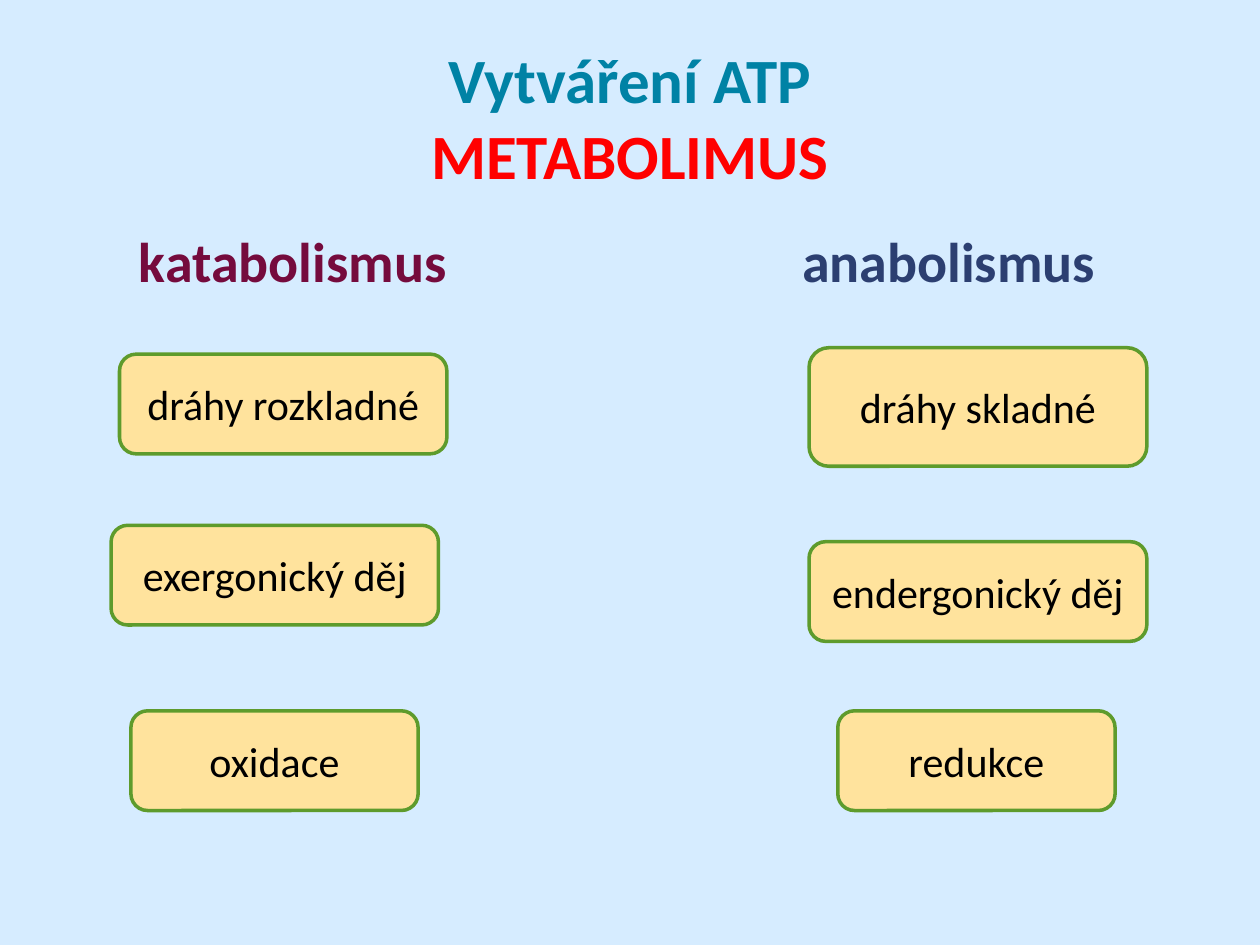
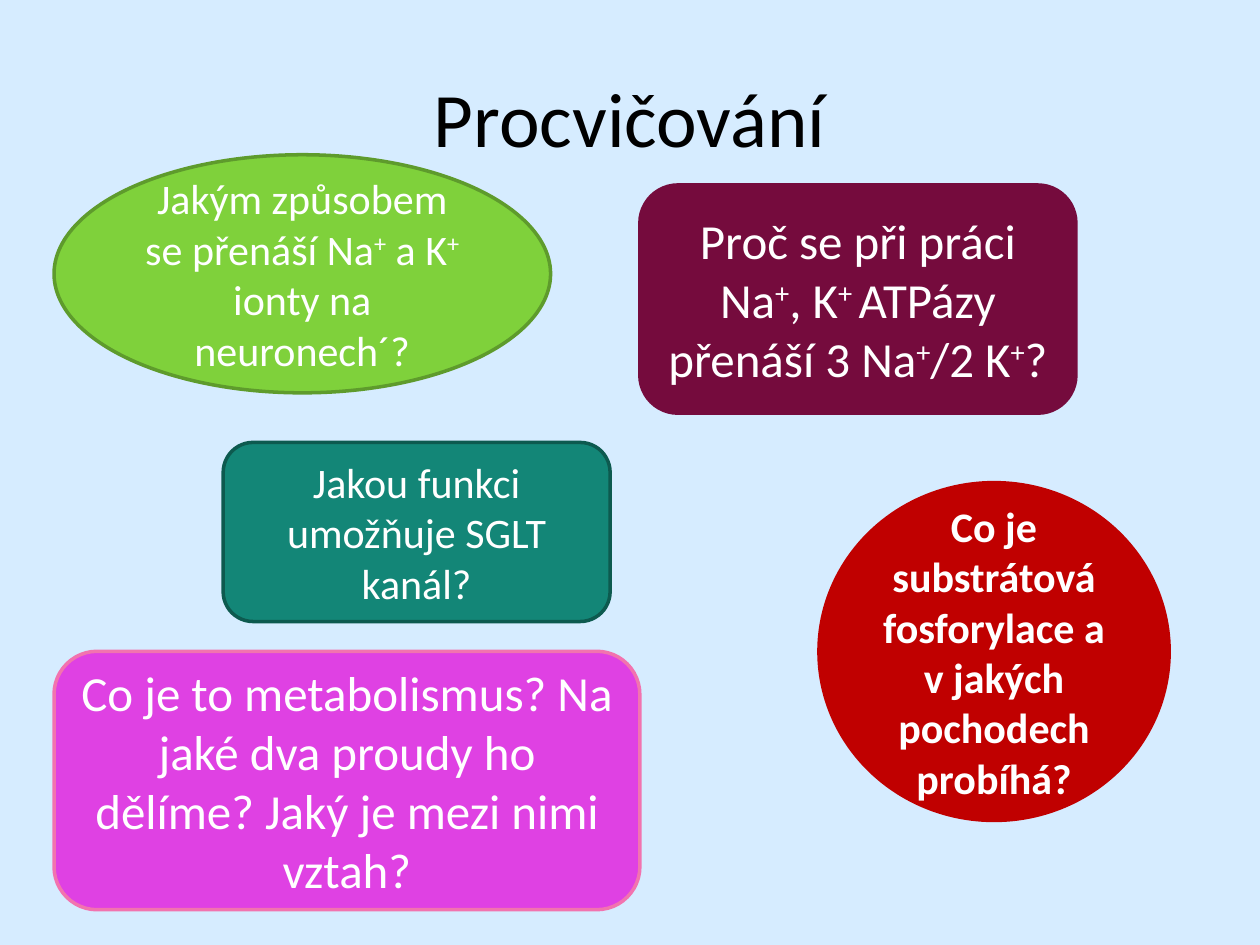
from pptx import Presentation
from pptx.dml.color import RGBColor
from pptx.enum.shapes import MSO_SHAPE
from pptx.enum.text import MSO_ANCHOR, PP_ALIGN
from pptx.util import Cm, Pt

FONT = "Calibri"
COLORS = {
    "background": "D6ECFF", "black": "000000", "white": "FFFFFF",
    "teal_blue": "0082A5", "red": "FF0000", "wine": "750B3D", "navy": "2C3F71",
    "card": "FFE39D", "green_line": "5E9B2C", "green": "7FD13B",
    "teal": "138677", "teal_line": "0D5A4F", "dark_red": "C00000",
    "magenta": "DF41E3", "pink_line": "F273AF",
}
TITLE_BOX = (1.27, 0.76, 22.86, 3.18)


def color(name):
    return RGBColor.from_string(COLORS[name])


def add_runs(paragraph, text, size, ink, bold=False):
    """Add runs to a paragraph; text between ^ marks is raised."""
    for index, part in enumerate(text.split("^")):
        if not part:
            continue
        run = paragraph.add_run()
        run.text = part
        run.font.name = FONT
        run.font.size = Pt(size)
        run.font.bold = bold
        run.font.color.rgb = color(ink)
        if index % 2:
            run._r.get_or_add_rPr().set("baseline", "30000")


def add_text_box(slide, box, anchor, align):
    frame = slide.shapes.add_textbox(*map(Cm, box)).text_frame
    frame.word_wrap = True
    frame.vertical_anchor = anchor
    frame.paragraphs[0].alignment = align
    return frame.paragraphs[0]


def add_title(slide, lines, size, bold=False):
    title = add_text_box(slide, TITLE_BOX, MSO_ANCHOR.MIDDLE, PP_ALIGN.CENTER)
    for index, (text, ink) in enumerate(lines):
        if index:
            title.add_line_break()
        add_runs(title, text, size, ink, bold)


def add_bubble(slide, outline, box, fill, line, text, size, ink, bold=False):
    bubble = slide.shapes.add_shape(outline, *map(Cm, box))
    bubble.shadow.inherit = False
    bubble.fill.solid()
    bubble.fill.fore_color.rgb = color(fill)
    bubble.line.color.rgb = color(line)
    bubble.line.width = Pt(2)
    bubble.text_frame.word_wrap = True
    bubble.text_frame.vertical_anchor = MSO_ANCHOR.MIDDLE
    paragraph = bubble.text_frame.paragraphs[0]
    paragraph.alignment = PP_ALIGN.CENTER
    add_runs(paragraph, text, size, ink, bold)


def add_pathway_column(slide, left, top, heading, ink, cards):
    """Heading with cards below, each placed from the column's corner."""
    label = add_text_box(slide, (left, top, 8, 2.29), MSO_ANCHOR.TOP, PP_ALIGN.LEFT)
    add_runs(label, heading, 32, ink, bold=True)
    for text, dx, dy, width, height in cards:
        add_bubble(slide, MSO_SHAPE.ROUNDED_RECTANGLE,
                   (left + dx, top + dy, width, height),
                   "card", "green_line", text, 24, "black")


def new_slide(deck):
    slide = deck.slides.add_slide(deck.slide_layouts[6])
    slide.background.fill.solid()
    slide.background.fill.fore_color.rgb = color("background")
    return slide


def build_metabolism(deck):
    slide = new_slide(deck)
    add_title(slide, [("Vytváření ATP", "teal_blue"), ("METABOLIMUS", "red")], 36, bold=True)
    add_pathway_column(slide, 2.55, 4.45, "katabolismus", "wine", [
        ("dráhy rozkladné", -0.14, 2.69, 6.6, 2.01),
        ("exergonický děj", -0.31, 6.14, 6.6, 2.01),
        ("oxidace", 0.09, 9.88, 5.79, 2.01),
    ])
    add_pathway_column(slide, 15.92, 4.45, "anabolismus", "navy", [
        ("dráhy skladné", 0.39, 2.56, 6.81, 2.39),
        ("endergonický děj", 0.39, 6.47, 6.81, 2.01),
        ("redukce", 0.97, 9.88, 5.59, 2.01),
    ])


def build_practice(deck):
    slide = new_slide(deck)
    add_title(slide, [("Procvičování", "black")], 44)
    rounded, oval = MSO_SHAPE.ROUNDED_RECTANGLE, MSO_SHAPE.OVAL
    # Questions: outline, box, fill, line, text, size, bold
    questions = [
        (oval, (1.09, 3.12, 10.01, 4.8), "green", "green_line",
         "Jakým způsobem se přenáší Na^+^ a K^+^ ionty na neuronech´?", 24, False),
        (rounded, (12.9, 3.73, 8.79, 4.6), "wine", "wine",
         "Proč se při práci Na^+^, K^+ ^ATPázy přenáší 3 Na^+^/2 K^+^?", 28, False),
        (rounded, (4.5, 8.92, 7.8, 3.61), "teal", "teal_line",
         "Jakou funkci umožňuje SGLT kanál?", 24, False),
        (oval, (16.51, 9.73, 7.06, 6.81), "dark_red", "dark_red",
         "Co je substrátová fosforylace a v jakých pochodech probíhá?", 24, True),
        (rounded, (1.09, 13.13, 11.81, 5.21), "magenta", "pink_line",
         "Co je to metabolismus? Na jaké dva proudy ho dělíme? "
         "Jaký je mezi nimi vztah?", 28, False),
    ]
    for outline, box, fill, line, text, size, bold in questions:
        add_bubble(slide, outline, box, fill, line, text, size, "white", bold)


def main():
    deck = Presentation()
    deck.slide_width, deck.slide_height = Cm(25.4), Cm(19.05)
    build_metabolism(deck)
    build_practice(deck)
    deck.save("out.pptx")


if __name__ == "__main__":
    main()
